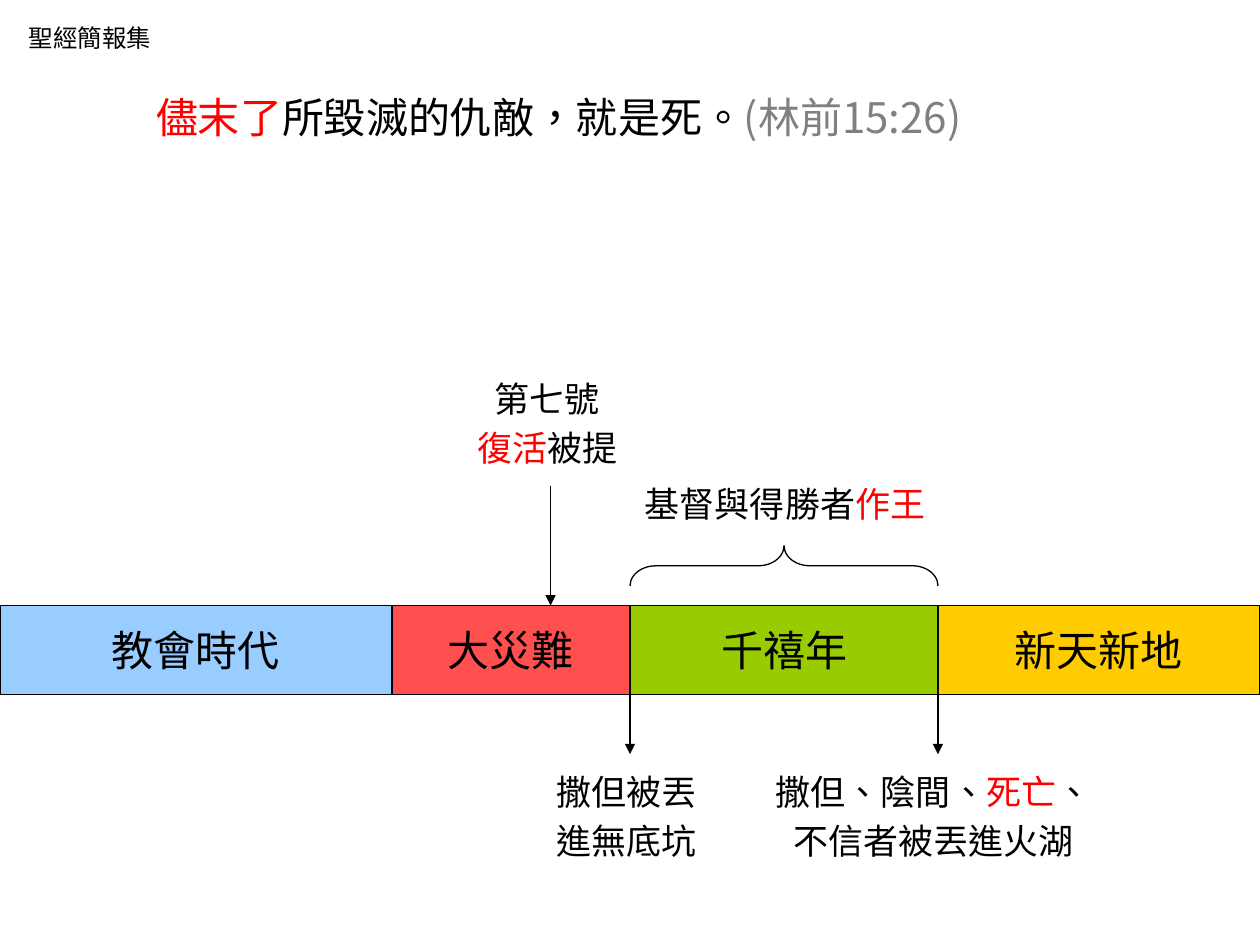
from lxml import etree
from pptx import Presentation
from pptx.dml.color import RGBColor
from pptx.enum import lang, shapes, text
from pptx.oxml.ns import qn
from pptx.util import Pt

BLACK = RGBColor(0x00, 0x00, 0x00)
RED = RGBColor(0xFF, 0x00, 0x00)
GRAY = RGBColor(0x80, 0x80, 0x80)
BLUE_BAND = RGBColor(0x99, 0xCC, 0xFF)
RED_BAND = RGBColor(0xFF, 0x50, 0x50)
GREEN_BAND = RGBColor(0x99, 0xCC, 0x00)
YELLOW_BAND = RGBColor(0xFF, 0xCC, 0x00)

LATIN, CJK = "Arial", "Noto Sans CJK SC"
LINE_WIDTH = 0.75
BAND_TOP, BAND_HEIGHT = 346, 51
BAND_BOTTOM = BAND_TOP + BAND_HEIGHT
ARROW_LENGTH = 34
BRACE_DEPTH, BRACE_CENTER_Y = 23, 323.3

# name, width, fill
ERAS = [
    ("教會時代", 224, BLUE_BAND),
    ("大災難", 136, RED_BAND),
    ("千禧年", 176, GREEN_BAND),
    ("新天新地", 184, YELLOW_BAND),
]

CENTERED = {"alignment": text.PP_ALIGN.CENTER}
EVENT = {**CENTERED, "space_after": Pt(4)}
VERSE = {"line_spacing": 1.2, "space_after": Pt(7.2)}

# (left, top, width, height), size, font, wrap, paragraph format, paragraphs of (text, colour)
LABELS = [
    ((82.1, 43.2, 584, 41.8), 24, CJK, True, VERSE,
     [[("儘末了", RED), ("所毀滅的仇敵，就是死。", BLACK), ("(林前15:26)", GRAY)]]),
    ((264.8, 212.4, 96, 59.8), 20, LATIN, False, EVENT,
     [[("第七號", BLACK)], [("復活", RED), ("被提", BLACK)]]),
    ((310.2, 437, 96, 59.8), 20, LATIN, False, EVENT,
     [[("撒但被丟", BLACK)], [("進無底坑", BLACK)]]),
    ((431.5, 437, 204, 59.8), 20, LATIN, False, EVENT,
     [[("撒但、陰間、", BLACK), ("死亡", RED), ("、", BLACK)],
      [("不信者被丟進火湖", BLACK)]]),
    ((361.4, 272.2, 184, 31), 20, LATIN, False, {},
     [[("基督與得勝者", BLACK), ("作王", RED)]]),
    ((9.4, 9.4, 105, 24.5), 14, LATIN, True, {}, [[("聖經簡報集", BLACK)]]),
]


def apply(target, values):
    for name, value in values.items():
        setattr(target, name, value)


def write(frame, paragraphs, size, font_name, paragraph_format):
    font_format = {"size": Pt(size), "name": font_name,
                   "language_id": lang.MSO_LANGUAGE_ID.TRADITIONAL_CHINESE}
    for index, runs in enumerate(paragraphs):
        paragraph = frame.add_paragraph() if index else frame.paragraphs[0]
        apply(paragraph, paragraph_format)
        for words, color in runs:
            run = paragraph.add_run()
            run.text = words
            apply(run.font, font_format)
            run.font.color.rgb = color
            east_asian = etree.SubElement(run.font._element, qn("a:ea"))
            east_asian.set("typeface", font_name)


def outline(line):
    line.color.rgb = BLACK
    line.width = Pt(LINE_WIDTH)


def add_outlined(slide, kind, left, top, width, height):
    shape = slide.shapes.add_shape(kind, Pt(left), Pt(top), Pt(width), Pt(height))
    shape.shadow.inherit = False
    outline(shape.line)
    return shape


def add_down_arrow(slide, x, start, end):
    arrow = slide.shapes.add_connector(
        shapes.MSO_CONNECTOR.STRAIGHT, Pt(x), Pt(start), Pt(x), Pt(end))
    outline(arrow.line)
    etree.SubElement(arrow.line._get_or_add_ln(), qn("a:tailEnd"), type="triangle")
    etree.SubElement(arrow._element.spPr, qn("a:effectLst"))


def add_eras(slide):
    """Draw the timeline and return the left edge of each era."""
    edges, left = [], 0
    for name, width, fill in ERAS:
        band = add_outlined(slide, shapes.MSO_SHAPE.RECTANGLE,
                            left, BAND_TOP, width, BAND_HEIGHT)
        band.fill.solid()
        band.fill.fore_color.rgb = fill
        apply(band.text_frame, {"word_wrap": False,
                                "vertical_anchor": text.MSO_ANCHOR.MIDDLE})
        write(band.text_frame, [[(name, BLACK)]], 24, LATIN, CENTERED)
        edges.append(left)
        left += width
    return edges


def add_brace(slide, start, end):
    """Span start to end with a left brace turned to point upwards."""
    span = end - start
    brace = add_outlined(slide, shapes.MSO_SHAPE.LEFT_BRACE,
                         (start + end - BRACE_DEPTH) / 2, BRACE_CENTER_Y - span / 2,
                         BRACE_DEPTH, span)
    brace.fill.background()
    brace.rotation = 90
    brace.adjustments[0] = 0.64


def add_label(slide, box, size, font_name, wrap, paragraph_format, paragraphs):
    frame = slide.shapes.add_textbox(*map(Pt, box)).text_frame
    apply(frame, {"word_wrap": wrap,
                  "auto_size": text.MSO_AUTO_SIZE.SHAPE_TO_FIT_TEXT})
    write(frame, paragraphs, size, font_name, paragraph_format)


def main():
    presentation = Presentation()
    apply(presentation, {"slide_width": Pt(720), "slide_height": Pt(540)})
    slide = presentation.slides.add_slide(presentation.slide_layouts[6])

    _, _, millennium, new_world = add_eras(slide)
    add_down_arrow(slide, 314.6, 278, BAND_TOP)
    for edge in (millennium, new_world):
        add_down_arrow(slide, edge, BAND_BOTTOM, BAND_BOTTOM + ARROW_LENGTH)
    add_brace(slide, millennium, new_world)
    for label in LABELS:
        add_label(slide, *label)

    presentation.save("out.pptx")


if __name__ == "__main__":
    main()
